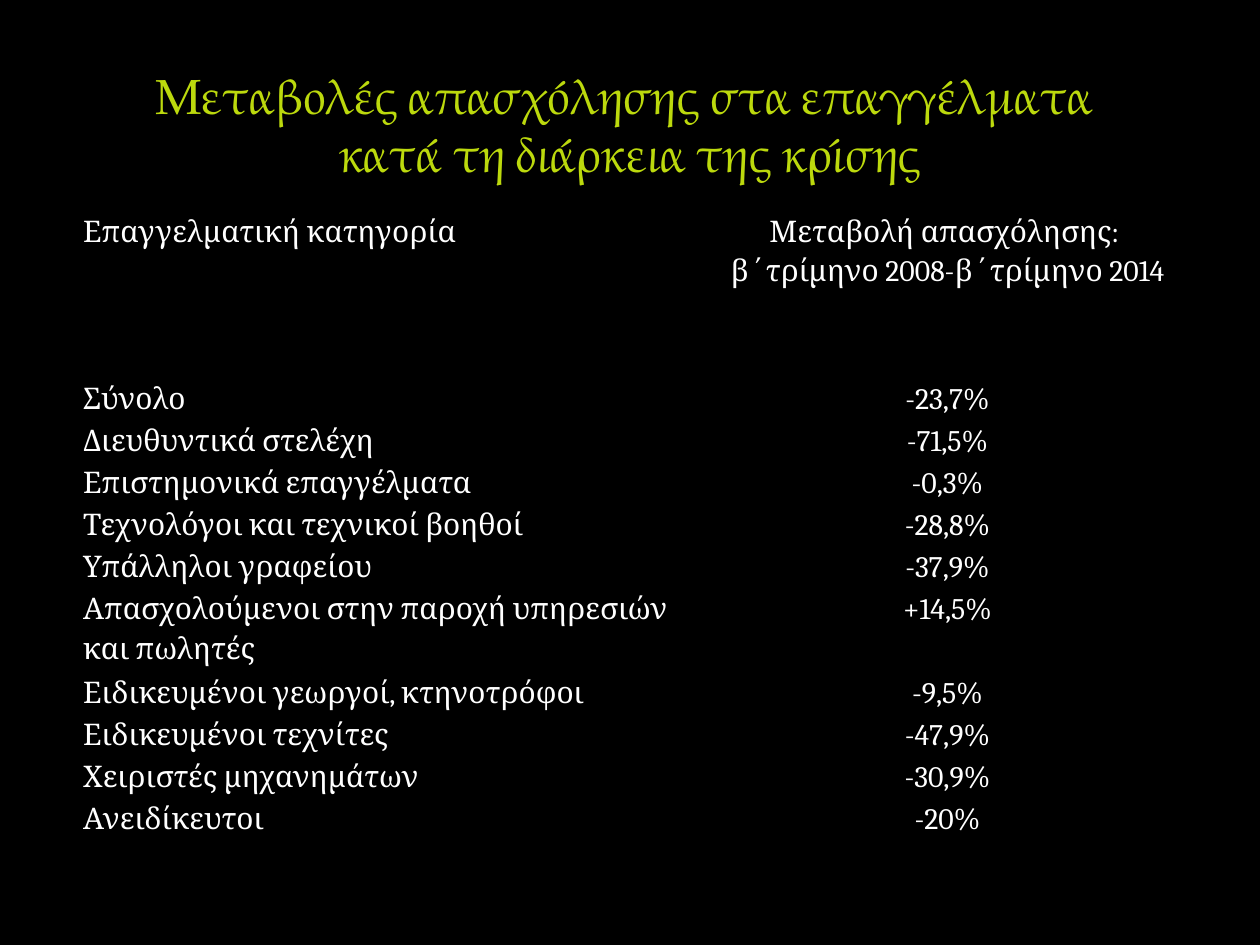
import pptx
import pptx.util
import pptx.dml.color
import pptx.enum.text
import pptx.oxml
import pptx.oxml.ns

Pt = pptx.util.Pt
ALIGN = pptx.enum.text.PP_ALIGN
BLACK = pptx.dml.color.RGBColor(0x00, 0x00, 0x00)
WHITE = pptx.dml.color.RGBColor(0xFF, 0xFF, 0xFF)
LIME = pptx.dml.color.RGBColor(0xBC, 0xD9, 0x0D)

ROWS = [
    ("Επαγγελματική κατηγορία", "Μεταβολή απασχόλησης: \nβ΄τρίμηνο 2008-β΄τρίμηνο 2014"),
    ("Σύνολο", "-23,7%"),
    ("Διευθυντικά στελέχη", "-71,5%"),
    ("Επιστημονικά επαγγέλματα", "-0,3%"),
    ("Τεχνολόγοι και τεχνικοί βοηθοί", "-28,8%"),
    ("Υπάλληλοι γραφείου", "-37,9%"),
    ("Απασχολούμενοι στην παροχή υπηρεσιών και πωλητές", "+14,5%"),
    ("Ειδικευμένοι γεωργοί, κτηνοτρόφοι", "-9,5%"),
    ("Ειδικευμένοι τεχνίτες", "-47,9%"),
    ("Χειριστές μηχανημάτων", "-30,9%"),
    ("Ανειδίκευτοι", "-20%"),
]
ROW_HEIGHT = 24
ROW_UNITS = {0: 4, 6: 2}  # rows taller than one unit
CELL_FORMAT = {"margin_left": Pt(5), "margin_right": Pt(5),
               "margin_top": 0, "margin_bottom": 0}
TABLE_FLAGS = {"first_row": False, "horz_banding": False}


def set_font(r, name, size, color):
    for key, value in {"name": name, "size": Pt(size)}.items():
        setattr(r.font, key, value)
    r.font.color.rgb = color


def add_borders(cell):
    tcPr = cell._tc.get_or_add_tcPr()
    for i, side in enumerate(("lnL", "lnR", "lnT", "lnB")):
        tcPr.insert(i, pptx.oxml.parse_xml(
            f'<a:{side} {pptx.oxml.ns.nsdecls("a")} w="{Pt(1)}"><a:solidFill>'
            f'<a:srgbClr val="{BLACK}"/></a:solidFill></a:{side}>'))


prs = pptx.Presentation()
prs.slide_width, prs.slide_height = Pt(720), Pt(540)
s = prs.slides.add_slide(prs.slide_layouts[6])

# Background
s.background.fill.solid()
s.background.fill.fore_color.rgb = BLACK

# Employment table
table = s.shapes.add_table(len(ROWS), 2, Pt(42.5), Pt(120), Pt(629.3), Pt(360)).table
for key, value in TABLE_FLAGS.items():
    setattr(table, key, value)
for column, width in zip(table.columns, (368.64, 260.64)):
    column.width = Pt(width)
for i, texts in enumerate(ROWS):
    table.rows[i].height = Pt(ROW_HEIGHT * ROW_UNITS.get(i, 1))
    for j, text in enumerate(texts):
        cell = table.cell(i, j)
        for key, value in CELL_FORMAT.items():
            setattr(cell, key, value)
        cell.fill.background()
        add_borders(cell)
        cell.text_frame.text = text
        for p in cell.text_frame.paragraphs:
            if j == 1:
                p.alignment = ALIGN.CENTER
            else:
                p.alignment = ALIGN.LEFT if i == 6 else ALIGN.JUSTIFY
            p.line_spacing = 1.15
            set_font(p.runs[0], "Cambria", 17, WHITE)

# Title, resting on the bottom of its box
tf = s.shapes.add_textbox(Pt(36), Pt(12), Pt(648), Pt(96)).text_frame
tf.word_wrap = True
tf.vertical_anchor = pptx.enum.text.MSO_ANCHOR.BOTTOM
p = tf.paragraphs[0]
p.text = "Μεταβολές απασχόλησης στα επαγγέλματα \vκατά τη διάρκεια της κρίσης"
p.alignment = ALIGN.CENTER
for r in p.runs:
    set_font(r, "TeX Gyre Pagella", 28, LIME)
    r.font._element.set("spc", "-100")

prs.save("out.pptx")
